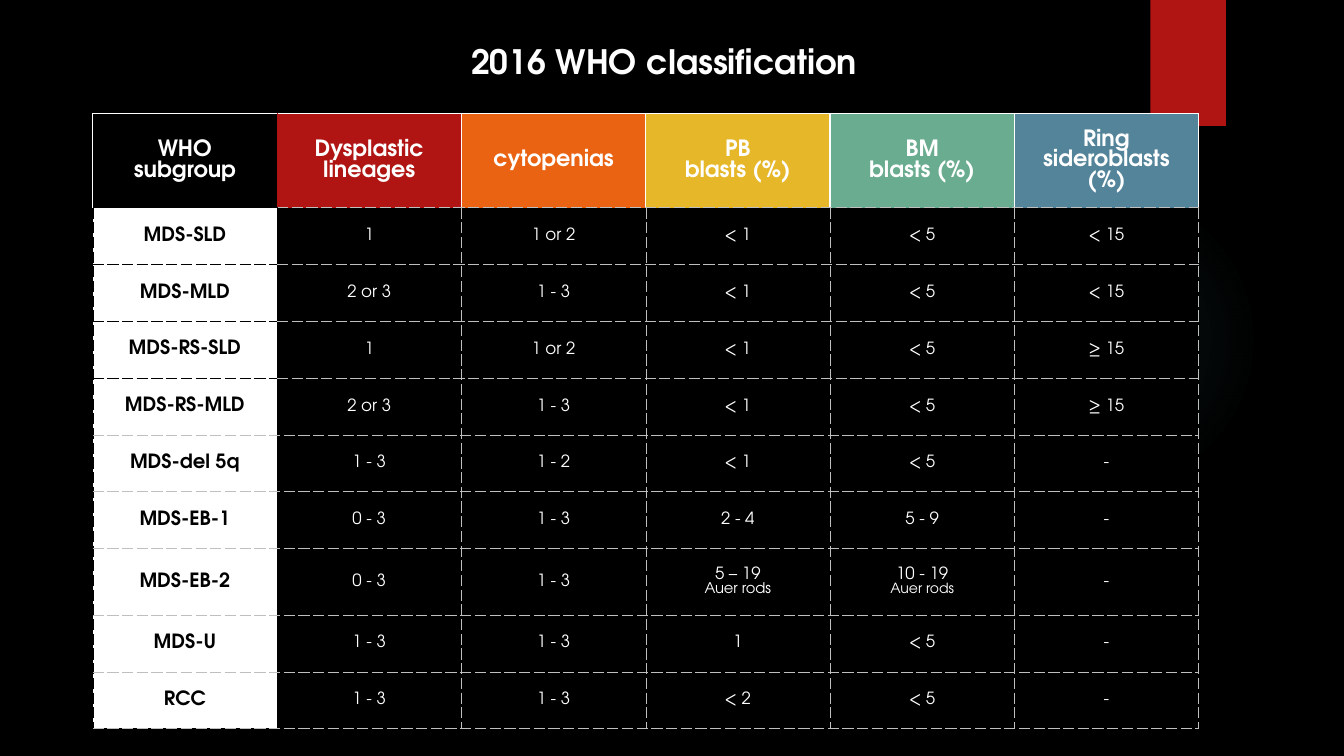
"""Build a slide with the 2016 WHO classification table."""
from dataclasses import dataclass

from pptx import Presentation
from pptx.dml.color import RGBColor
from pptx.enum.shapes import MSO_SHAPE
from pptx.enum.text import MSO_ANCHOR, MSO_AUTO_SIZE, PP_ALIGN
from pptx.oxml import parse_xml
from pptx.oxml.ns import nsdecls, qn
from pptx.util import Inches, Pt

RECT, OVAL = MSO_SHAPE.RECTANGLE, MSO_SHAPE.OVAL
TOP, MIDDLE = MSO_ANCHOR.TOP, MSO_ANCHOR.MIDDLE
CENTER = PP_ALIGN.CENTER
NO_AUTOFIT = MSO_AUTO_SIZE.NONE

FONT = "TeX Gyre Adventor"
COLORS = {
    "black": "000000", "white": "FFFFFF", "grid": "BFBFBF", "red": "B01513",
    "orange": "EA6312", "yellow": "E6B729", "green": "6AAC90",
    "blue": "54849A", "glow": "50B9C1",
}
GLOW_STOPS = [(0, 7), (36, 6), (69, 0), (100, 0)]
TABLE_BOX = (0.92, 1.13, 10.97, 6.1)
HEADER_HEIGHT, TALL_HEIGHT, TALL_ROW = 0.93, 0.66, 7


@dataclass
class Column:
    heading: str
    color: str


@dataclass
class Panel:
    kind: int
    box: tuple[float, float, float, float]
    color: str
    alpha: int = 100


@dataclass
class Border:
    color: str = "grid"
    width: float = 0.25
    dash: str = "sysDash"


COLUMNS = [
    Column("WHO\nsubgroup", "black"),
    Column("Dysplastic lineages", "red"),
    Column("cytopenias", "orange"),
    Column("PB\nblasts (%)", "yellow"),
    Column("BM\nblasts (%)", "green"),
    Column("Ring\nsideroblasts (%)", "blue"),
]
SUBGROUPS = [
    ("MDS-SLD", "1", "1 or 2", "< 1", "< 5", "< 15"),
    ("MDS-MLD", "2 or 3", "1 - 3", "< 1", "< 5", "< 15"),
    ("MDS-RS-SLD", "1", "1 or 2", "< 1", "< 5", "≥ 15"),
    ("MDS-RS-MLD", "2 or 3", "1 - 3", "< 1", "< 5", "≥ 15"),
    ("MDS-del 5q", "1 - 3", "1 - 2", "< 1", "< 5", "-"),
    ("MDS-EB-1", "0 - 3", "1 - 3", "2 - 4", "5 - 9", "-"),
    ("MDS-EB-2", "0 - 3", "1 - 3", "5 – 19\nAuer rods", "10 - 19\nAuer rods", "-"),
    ("MDS-U", "1 - 3", "1 - 3", "1", "< 5", "-"),
    ("RCC", "1 - 3", "1 - 3", "< 2", "< 5", "-"),
]
GLOW = Panel(OVAL, (9.41, 1.83, 3.08, 3.08), "glow", 0)
RIBBON = Panel(RECT, (11.41, 0, 0.75, 1.25), "red")
TITLE_BACKING = Panel(RECT, (4.2, 0.23, 4.78, 0.73), "black", 42)


def rgb(name: str) -> RGBColor:
    """Look up a colour by name."""
    return RGBColor.from_string(COLORS[name])


def write(tf, text: str, *, size: float, color: str = "white", bold: bool = False,
          note_size: float | None = None, spacing: float | None = None) -> None:
    """Fill a text frame with one centred paragraph per line."""
    for i, line in enumerate(text.split("\n")):
        p = tf.paragraphs[0] if i == 0 else tf.add_paragraph()
        p.alignment = CENTER
        if spacing:
            p.line_spacing = spacing
        r = p.add_run()
        r.text = line
        r.font.name = FONT
        r.font.size = Pt(note_size if i and note_size else size)
        r.font.bold = bold
        r.font.color.rgb = rgb(color)


def add_panel(s, panel: Panel):
    """Draw a borderless shape with an optionally transparent fill."""
    sp = s.shapes.add_shape(panel.kind, *map(Inches, panel.box))
    sp.shadow.inherit = False
    sp.line.fill.background()
    sp.fill.solid()
    sp.fill.fore_color.rgb = rgb(panel.color)
    if panel.alpha < 100:
        clr = sp.element.spPr.find(qn("a:solidFill"))[0]
        clr.append(parse_xml(f'<a:alpha {nsdecls("a")} val="{panel.alpha * 1000}"/>'))
    return sp


def add_glow(s) -> None:
    """Draw the faint circular glow behind the table."""
    sp = add_panel(s, GLOW)
    stops = "".join(
        f'<a:gs pos="{pos * 1000}"><a:srgbClr val="{COLORS[GLOW.color]}">'
        f'<a:alpha val="{alpha * 1000}"/></a:srgbClr></a:gs>'
        for pos, alpha in GLOW_STOPS)
    gradient = parse_xml(
        f'<a:gradFill {nsdecls("a")}><a:gsLst>{stops}</a:gsLst><a:path path="circle">'
        '<a:fillToRect l="50000" t="50000" r="50000" b="50000"/></a:path></a:gradFill>')
    spPr = sp.element.spPr
    spPr.replace(spPr.find(qn("a:solidFill")), gradient)


def cell_borders(row: int, col: int) -> dict[str, Border]:
    """Give the left, right, top and bottom borders of a table cell."""
    sides = {side: Border() for side in "LRTB"}
    black = Border("black")
    if row == 0:
        sides.update({side: Border("white", 1, "solid") for side in "LRT"})
        if col == 0:
            sides.update(R=Border("red"), B=black)
        elif col == 1:
            sides["L"] = Border("red")
    elif col == 0:
        sides.update(L=black, R=black)
        if row <= 4:
            sides["T"] = black
        if row <= 3:
            sides["B"] = black
    elif col == 1:
        sides["L"] = black
    return sides


def format_cell(cell, row: int, col: int, fill: str) -> None:
    """Set the borders, fill and anchor of a table cell."""
    tcPr = cell._tc.get_or_add_tcPr()
    for side, border in cell_borders(row, col).items():
        tcPr.append(parse_xml(
            f'<a:ln{side} {nsdecls("a")} w="{Pt(border.width)}"><a:solidFill>'
            f'<a:srgbClr val="{COLORS[border.color]}"/></a:solidFill>'
            f'<a:prstDash val="{border.dash}"/></a:ln{side}>'))
    cell.fill.solid()
    cell.fill.fore_color.rgb = rgb(fill)
    cell.vertical_anchor = MIDDLE


def add_classification(s) -> None:
    """Add the table of subgroups."""
    rows = [tuple(c.heading for c in COLUMNS), *SUBGROUPS]
    table = s.shapes.add_table(len(rows), len(COLUMNS), *map(Inches, TABLE_BOX)).table
    table.first_row = table.horz_banding = False
    for column in table.columns:
        column.width = Inches(TABLE_BOX[2] / len(COLUMNS))
    row_height = (TABLE_BOX[3] - HEADER_HEIGHT - TALL_HEIGHT) / (len(rows) - 2)
    special = {0: HEADER_HEIGHT, TALL_ROW: TALL_HEIGHT}
    for i, texts in enumerate(rows):
        table.rows[i].height = Inches(special.get(i, row_height))
        for j, text in enumerate(texts):
            cell = table.cell(i, j)
            if i == 0:
                format_cell(cell, i, j, COLUMNS[j].color)
                write(cell.text_frame, text, size=16, bold=True)
            elif j == 0:
                format_cell(cell, i, j, "white")
                write(cell.text_frame, text, size=14, color="black", bold=True)
            else:
                format_cell(cell, i, j, "black")
                write(cell.text_frame, text, size=12, note_size=10.5 if j == 3 else 10)


def place_title(s) -> None:
    """Position the title in front of its backing and fill it."""
    sp = s.shapes.title
    sp.left, sp.top, sp.width, sp.height = map(Inches, (0.92, 0.4, 11.33, 0.89))
    sp.element.getparent().append(sp.element)
    tf = sp.text_frame
    tf.auto_size = NO_AUTOFIT
    tf.word_wrap = True
    tf.vertical_anchor = TOP
    write(tf, "2016 WHO classification", size=24, bold=True, spacing=0.9)


def main() -> None:
    """Build and save the slide."""
    prs = Presentation()
    prs.slide_width, prs.slide_height = Inches(13.33), Inches(7.5)
    s = prs.slides.add_slide(prs.slide_layouts[5])
    s.background.fill.solid()
    s.background.fill.fore_color.rgb = rgb("black")
    add_glow(s)
    add_panel(s, RIBBON)
    add_panel(s, TITLE_BACKING)
    add_classification(s)
    place_title(s)
    prs.save("out.pptx")


if __name__ == "__main__":
    main()
